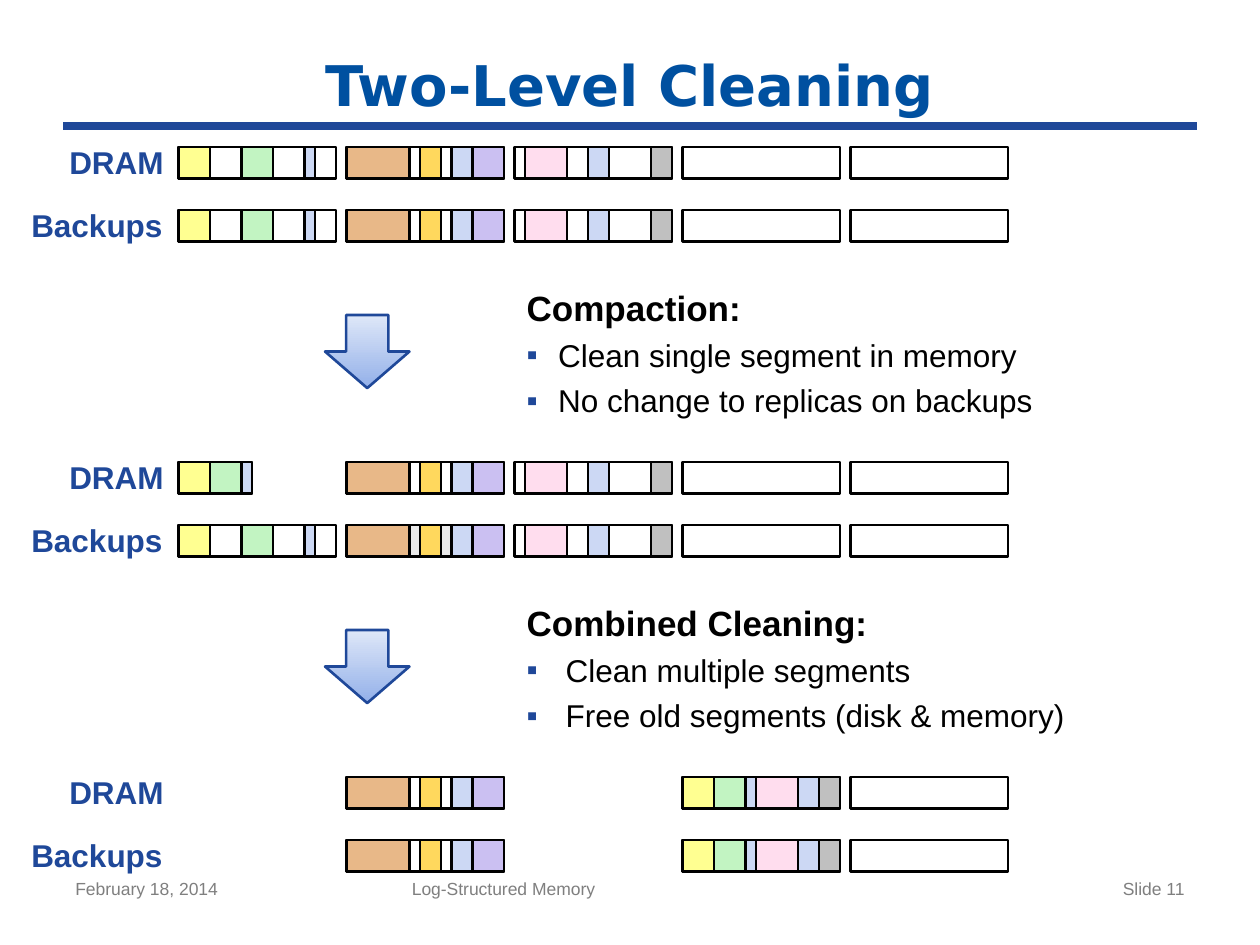
"""Builds the Two-Level Cleaning slide: memory segments before and after each step."""
from dataclasses import dataclass

from lxml import etree
from pptx import Presentation
from pptx.dml.color import RGBColor
from pptx.enum.shapes import MSO_CONNECTOR, MSO_SHAPE
from pptx.enum.text import MSO_ANCHOR, MSO_AUTO_SIZE, PP_ALIGN
from pptx.oxml.ns import qn
from pptx.util import Inches, Pt

RECTANGLE, DOWN_ARROW = MSO_SHAPE.RECTANGLE, MSO_SHAPE.DOWN_ARROW
STRAIGHT = MSO_CONNECTOR.STRAIGHT
LEFT, CENTER, RIGHT = PP_ALIGN.LEFT, PP_ALIGN.CENTER, PP_ALIGN.RIGHT
MIDDLE, TOP = MSO_ANCHOR.MIDDLE, MSO_ANCHOR.TOP
NO_AUTOFIT = MSO_AUTO_SIZE.NONE


@dataclass(frozen=True)
class Theme:
    font: str = "Arial"
    title_font: str = "DejaVu Sans"
    title_color: str = "0050A0"
    accent: str = "1F4899"
    text: str = "000000"
    muted: str = "7F7F7F"
    outline: str = "000000"
    arrow_top: str = "DEE7F8"
    arrow_bottom: str = "93B0E9"
    title_size: float = 32
    heading_size: float = 20
    body_size: float = 18
    footer_size: float = 10
    line_width: float = 1.5
    rule_width: float = 4.5
    bullet_gap: float = 4.4


THEME = Theme()
COLORS = {
    "white": "FFFFFF", "pale": "EAEAEA", "yellow": "FFFF91", "green": "C2F4C2",
    "blue": "CCD8F4", "brown": "E8B888", "gold": "FFD85D", "violet": "CBC0F2",
    "pink": "FFDDEE", "gray": "C0C0C0",
}

UNIT = 1 / 12
SEGMENT_UNITS, SEGMENT_PITCH, FIRST_SEGMENT = 15, 16, 17
ROW_HEIGHT = 3
STAGE_TOPS, BACKUP_OFFSET = (14, 44, 74), 6

FIRST_BLOCKS = [("yellow", 0, 3), ("green", 6, 3), ("blue", 12, 1)]
SECOND_BLOCKS = [("brown", 0, 6), ("gold", 7, 2), ("blue", 10, 2), ("violet", 12, 3)]
THIRD_BLOCKS = [("pink", 1, 4), ("blue", 7, 2), ("gray", 13, 2)]
COMPACT_BLOCKS = [("yellow", 0, 3), ("green", 3, 3), ("blue", 6, 1)]
COMBINED_BLOCKS = COMPACT_BLOCKS + [("pink", 7, 4), ("blue", 11, 2), ("gray", 13, 2)]

FIRST = ("white", SEGMENT_UNITS, FIRST_BLOCKS)
SECOND = ("white", SEGMENT_UNITS, SECOND_BLOCKS)
SECOND_PALE = ("pale", SEGMENT_UNITS, SECOND_BLOCKS)
THIRD = ("white", SEGMENT_UNITS, THIRD_BLOCKS)
COMPACTED = ("pale", 7, COMPACT_BLOCKS)
COMBINED = ("pale", SEGMENT_UNITS, COMBINED_BLOCKS)
EMPTY = ("white", SEGMENT_UNITS, [])
FREED = None

STAGES = [
    ([FIRST, SECOND, THIRD, EMPTY, EMPTY], [FIRST, SECOND, THIRD, EMPTY, EMPTY]),
    ([COMPACTED, SECOND, THIRD, EMPTY, EMPTY], [FIRST, SECOND_PALE, THIRD, EMPTY, EMPTY]),
    ([FREED, SECOND, FREED, COMBINED, EMPTY], [FREED, SECOND, FREED, COMBINED, EMPTY]),
]
ROW_LABELS = [("DRAM", 0.54, 0.76), ("Backups", 0.24, 1.05)]

TITLE = "Two-Level Cleaning"
STEPS = [
    ("Compaction:",
     ["Clean single segment in memory", "No change to replicas on backups"],
     (4.08, 2.22, 5.5, 1.25), 0.25),
    ("Combined Cleaning:",
     ["Clean multiple segments", "Free old segments (disk & memory)"],
     (4.08, 4.72, 5.67, 1.25), 0.31),
]
ARROW_TOPS = (2.5, 5)
FOOTERS = [
    ("February 18, 2014", 0.5, 2.33, LEFT),
    ("Log-Structured Memory", 3.17, 3.75, LEFT),
    ("Slide 11", 7.17, 2.33, RIGHT),
]


def place(shape, left, top, width, height):
    shape.left, shape.top = Inches(left), Inches(top)
    shape.width, shape.height = Inches(width), Inches(height)


def add_run(paragraph, text, size, color, bold=False, font=THEME.font):
    run = paragraph.add_run()
    run.text = text
    run.font.name, run.font.size, run.font.bold = font, Pt(size), bold
    run.font.color.rgb = RGBColor.from_string(color)


def add_text(slide, box, text, size, color, align, bold=False, wrap=True, inset=None):
    frame = slide.shapes.add_textbox(*map(Inches, box)).text_frame
    frame.word_wrap = wrap
    if inset is not None:
        frame.margin_left = frame.margin_right = Inches(inset)
        frame.margin_top = frame.margin_bottom = Inches(inset)
    paragraph = frame.paragraphs[0]
    paragraph.alignment = align
    add_run(paragraph, text, size, color, bold)


def add_outlined(slide, kind, box, line_color):
    shape = slide.shapes.add_shape(kind, *map(Inches, box))
    shape.shadow.inherit = False
    shape.line.color.rgb = RGBColor.from_string(line_color)
    shape.line.width = Pt(THEME.line_width)
    return shape


def add_block(slide, color, left, top, width):
    box = [units * UNIT for units in (left, top, width, ROW_HEIGHT)]
    block = add_outlined(slide, RECTANGLE, box, THEME.outline)
    block.fill.solid()
    block.fill.fore_color.rgb = RGBColor.from_string(COLORS[color])


def add_row(slide, segments, top):
    for index, segment in enumerate(segments):
        if segment is FREED:
            continue
        color, width, blocks = segment
        left = FIRST_SEGMENT + index * SEGMENT_PITCH
        add_block(slide, color, left, top, width)
        for block_color, offset, block_width in blocks:
            add_block(slide, block_color, left + offset, top, block_width)


def add_arrow(slide, top):
    arrow = add_outlined(slide, DOWN_ARROW, (2.58, top, 0.67, 0.58), THEME.accent)
    arrow.fill.gradient()
    arrow.fill.gradient_angle = 270
    for stop, color in zip(arrow.fill.gradient_stops, (THEME.arrow_top, THEME.arrow_bottom)):
        stop.color.rgb = RGBColor.from_string(color)


def set_bullet(paragraph, indent):
    properties = paragraph._p.get_or_add_pPr()
    properties.set("marL", str(Inches(indent)))
    properties.set("indent", str(-Inches(indent)))
    if not indent:
        etree.SubElement(properties, qn("a:buNone"))
        return
    color = etree.SubElement(properties, qn("a:buClr"))
    etree.SubElement(color, qn("a:srgbClr"), val=THEME.accent)
    etree.SubElement(properties, qn("a:buFont"), typeface=THEME.font)
    etree.SubElement(properties, qn("a:buChar"), char="▪")


def fill_step(placeholder, heading, bullets, box, indent):
    place(placeholder, *box)
    frame = placeholder.text_frame
    frame.auto_size, frame.vertical_anchor = NO_AUTOFIT, TOP
    paragraph = frame.paragraphs[0]
    paragraph.space_before = Pt(0)
    set_bullet(paragraph, 0)
    add_run(paragraph, heading, THEME.heading_size, THEME.text, True)
    for bullet in bullets:
        paragraph = frame.add_paragraph()
        paragraph.level = 1
        paragraph.space_before = Pt(THEME.bullet_gap)
        set_bullet(paragraph, indent)
        add_run(paragraph, bullet, THEME.body_size, THEME.text)


def add_title(slide):
    rule = slide.shapes.add_connector(STRAIGHT, Inches(0.5), Inches(1), Inches(9.5), Inches(1))
    rule.line.color.rgb = RGBColor.from_string(THEME.accent)
    rule.line.width = Pt(THEME.rule_width)
    etree.SubElement(rule._element.spPr, qn("a:effectLst"))
    title = slide.shapes.title
    place(title, 0.5, 0.33, 9, 0.67)
    title.text_frame.auto_size = NO_AUTOFIT
    title.text_frame.vertical_anchor = MIDDLE
    paragraph = title.text_frame.paragraphs[0]
    paragraph.alignment = CENTER
    add_run(paragraph, TITLE, THEME.title_size, THEME.title_color, True, THEME.title_font)


def main():
    presentation = Presentation()
    presentation.slide_width, presentation.slide_height = Inches(10), Inches(7.5)
    slide = presentation.slides.add_slide(presentation.slide_layouts[3])
    add_title(slide)
    for index, step in enumerate(STEPS, start=1):
        fill_step(slide.placeholders[index], *step)
    for stage_top, rows in zip(STAGE_TOPS, STAGES):
        for index, (segments, (label, left, width)) in enumerate(zip(rows, ROW_LABELS)):
            top = stage_top + index * BACKUP_OFFSET
            add_row(slide, segments, top)
            add_text(slide, (left, top * UNIT - 0.03, width, 0.3), label,
                     THEME.body_size, THEME.accent, RIGHT, True, False, 0)
    for top in ARROW_TOPS:
        add_arrow(slide, top)
    for text, left, width, align in FOOTERS:
        add_text(slide, (left, 6.92, width, 0.43), text, THEME.footer_size, THEME.muted, align)
    presentation.save("out.pptx")


if __name__ == "__main__":
    main()
